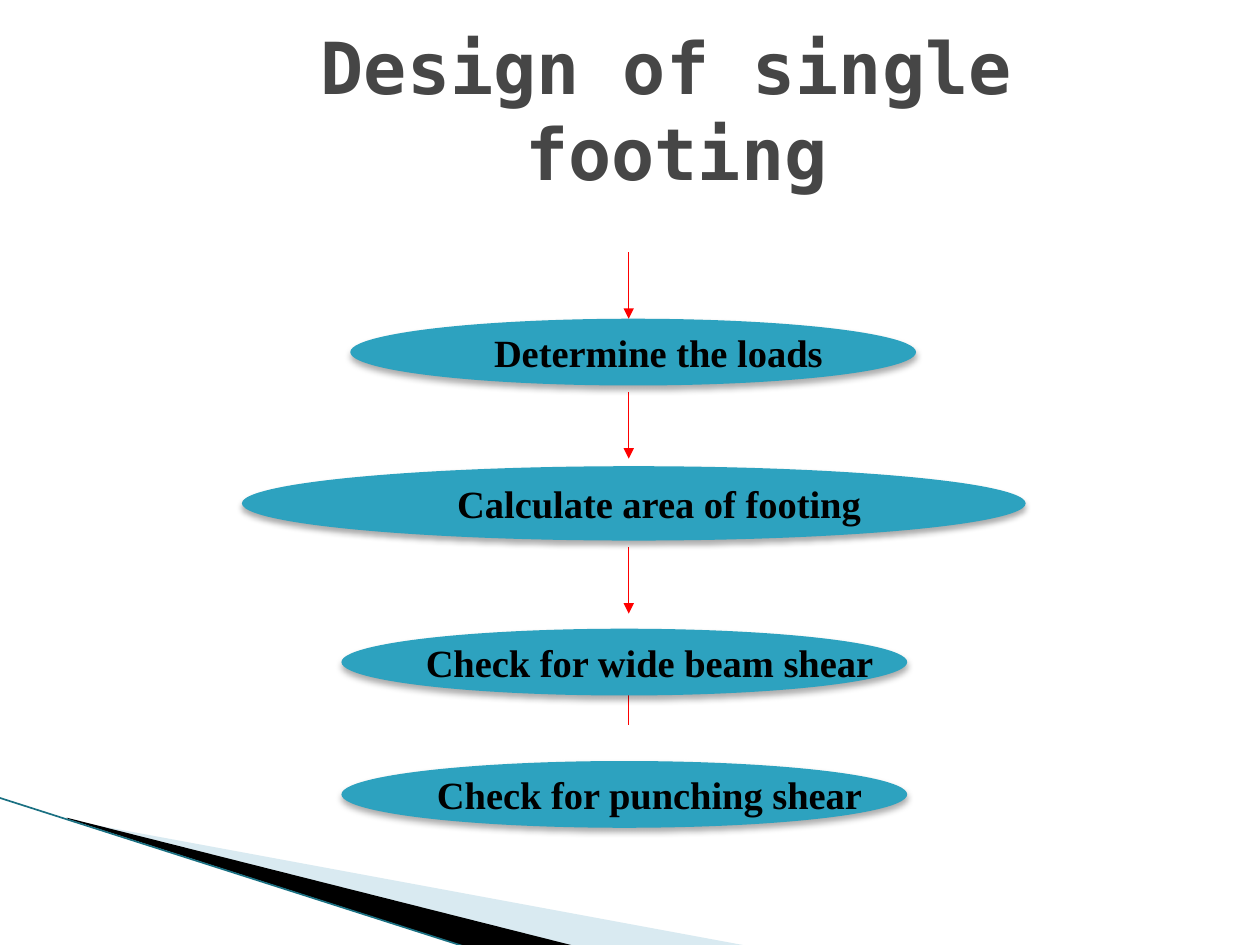
from dataclasses import dataclass

from lxml import etree
from pptx import Presentation
from pptx.dml.color import RGBColor
from pptx.enum.shapes import MSO_CONNECTOR, MSO_SHAPE
from pptx.enum.text import MSO_ANCHOR, PP_ALIGN
from pptx.oxml.ns import qn
from pptx.util import Pt

PX = 9144
TITLE_ONLY = 5
OVAL = MSO_SHAPE.OVAL
STRAIGHT = MSO_CONNECTOR.STRAIGHT
MIDDLE = MSO_ANCHOR.MIDDLE
CENTER = PP_ALIGN.CENTER


@dataclass(frozen=True)
class Theme:
    title: str = "464646"
    text: str = "000000"
    step: str = "2DA2BF"
    arrow: str = "FF0000"
    wedge_light: str = "A0CBDC"
    wedge_dark: str = "000000"
    wedge_line: str = "1A7082"
    title_font: str = "DejaVu Sans Mono"
    step_font: str = "Times New Roman"
    title_size: int = 41
    step_size: int = 22


THEME = Theme()


def px(*values):
    return [v * PX for v in values]


def rgb(value):
    return RGBColor.from_string(value)


def add_xml(parent, tag, **attrs):
    el = etree.SubElement(parent, qn(tag))
    for name, value in attrs.items():
        el.set(name, str(value))
    return el


def set_text(tf, text, *, font, size, color, wrap=True, rtl=False):
    tf.word_wrap = wrap
    tf.vertical_anchor = MIDDLE
    p = tf.paragraphs[0]
    p.alignment = CENTER
    if rtl:
        p._p.get_or_add_pPr().set("rtl", "1")
    r = p.add_run()
    r.text = text
    r.font.name = font
    r.font.size = Pt(size)
    r.font.bold = True
    r.font.color.rgb = rgb(color)


def add_line(s, start, end, color, width, arrow=False):
    sp = s.shapes.add_connector(STRAIGHT, *px(*start, *end))
    sp.line.color.rgb = rgb(color)
    sp.line.width = Pt(width)
    if arrow:
        add_xml(sp.line._get_or_add_ln(), "a:tailEnd", type="triangle")
    add_xml(sp._element.spPr, "a:effectLst")


def add_wedge(s, points, color, opacity=100):
    builder = s.shapes.build_freeform(*points[0], scale=PX)
    builder.add_line_segments(points[1:], close=True)
    sp = builder.convert_to_shape()
    sp.shadow.inherit = False
    sp.fill.solid()
    sp.fill.fore_color.rgb = rgb(color)
    sp.line.fill.background()
    if opacity < 100:
        clr = sp._element.spPr.find(qn("a:solidFill"))[0]
        add_xml(clr, "a:alpha", val=opacity * 1000)


def add_corner(s, x, y):
    def at(*points):
        return [(x + dx, y + dy) for dx, dy in points]

    add_wedge(s, at((55, 18), (595, 118), (456, 118), (55, 17)), THEME.wedge_light, 40)
    add_wedge(s, at((53, 16), (457, 118), (372, 119), (54, 17)), THEME.wedge_dark)
    add_line(s, *at((-1, 0), (371, 119)), THEME.wedge_line, 0.95)


def add_step(s, text, x, y, w, h):
    sp = s.shapes.add_shape(OVAL, *px(x, y, w, h))
    sp.fill.solid()
    sp.fill.fore_color.rgb = rgb(THEME.step)
    sp.line.fill.background()
    sp.shadow.inherit = False
    effects = sp._element.spPr.find(qn("a:effectLst"))
    shadow = add_xml(effects, "a:outerShdw", blurRad=Pt(3.5), dist=Pt(2.2),
                     dir=5400000, algn="ctr", rotWithShape=0)
    clr = add_xml(shadow, "a:srgbClr", val="000000")
    add_xml(clr, "a:alpha", val=32000)
    sp.text_frame.margin_left = 50 * PX
    set_text(sp.text_frame, text, font=THEME.step_font, size=THEME.step_size,
             color=THEME.text, wrap=False)


def add_flow(s, x, y):
    axis = x + 307
    for top, length, arrow in ((0, 53, True), (111, 53, True),
                               (234, 53, True), (351, 24, False)):
        add_line(s, (axis, y + top), (axis, y + top + length), THEME.arrow, 0.75, arrow)
    for text, dx, dy, w, h in (
        ("Determine the loads", 86, 53, 449, 53),
        ("Calculate area of footing", 0, 170, 622, 59),
        ("Check for wide beam shear", 79, 299, 449, 53),
        ("Check for punching shear", 79, 404, 449, 53),
    ):
        add_step(s, text, x + dx, y + dy, w, h)


def add_title(s, x, y, w, h):
    sp = s.shapes.title
    sp.left, sp.top, sp.width, sp.height = px(x, y, w, h)
    set_text(sp.text_frame, "Design of single footing ", font=THEME.title_font,
             size=THEME.title_size, color=THEME.title, rtl=True)


def main():
    prs = Presentation()
    prs.slide_width, prs.slide_height = px(1000, 750)
    s = prs.slides.add_slide(prs.slide_layouts[TITLE_ONLY])
    add_corner(s, 0, 633)
    add_flow(s, 192, 200)
    add_title(s, 108, 30, 842, 112)
    prs.save("out.pptx")


if __name__ == "__main__":
    main()
